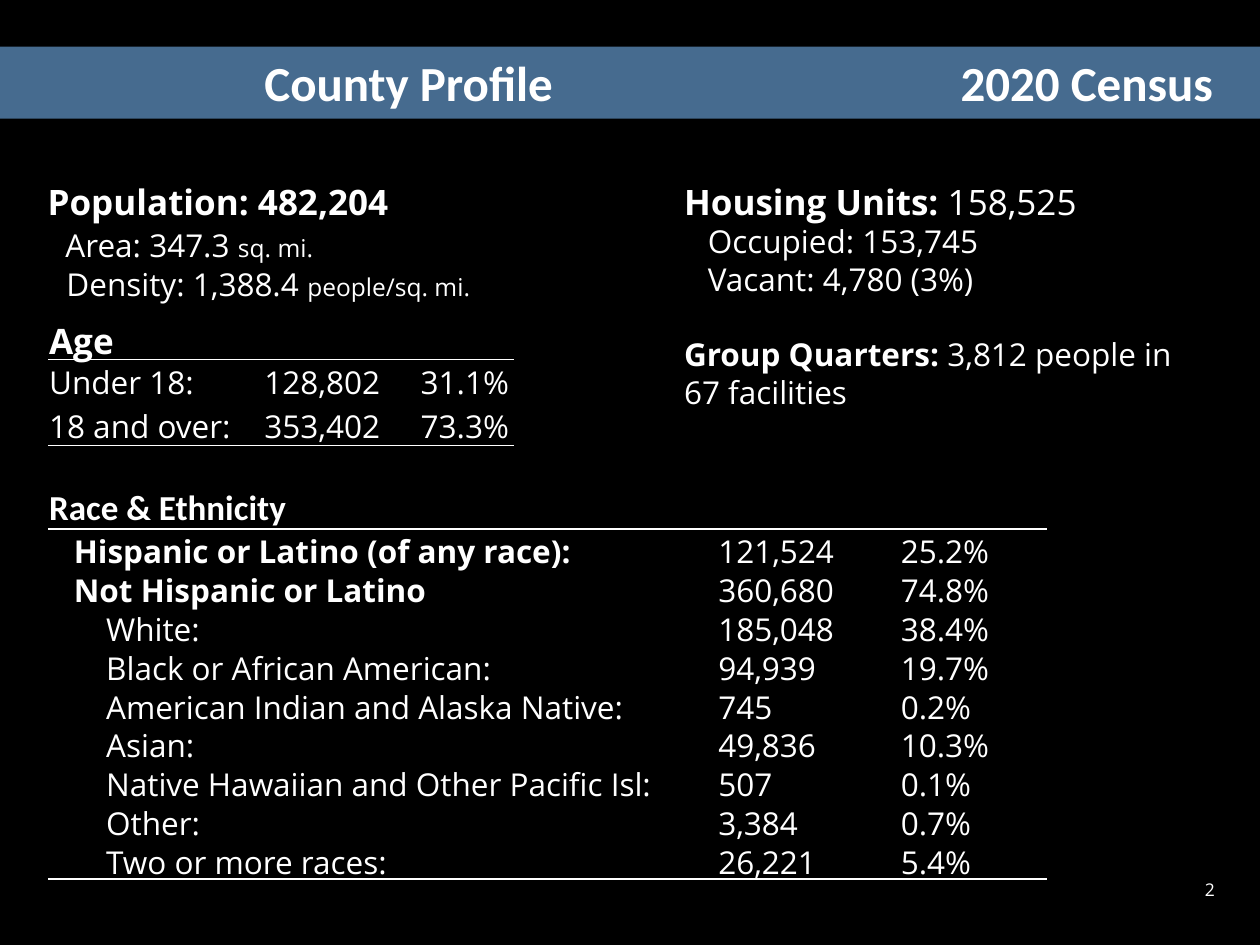
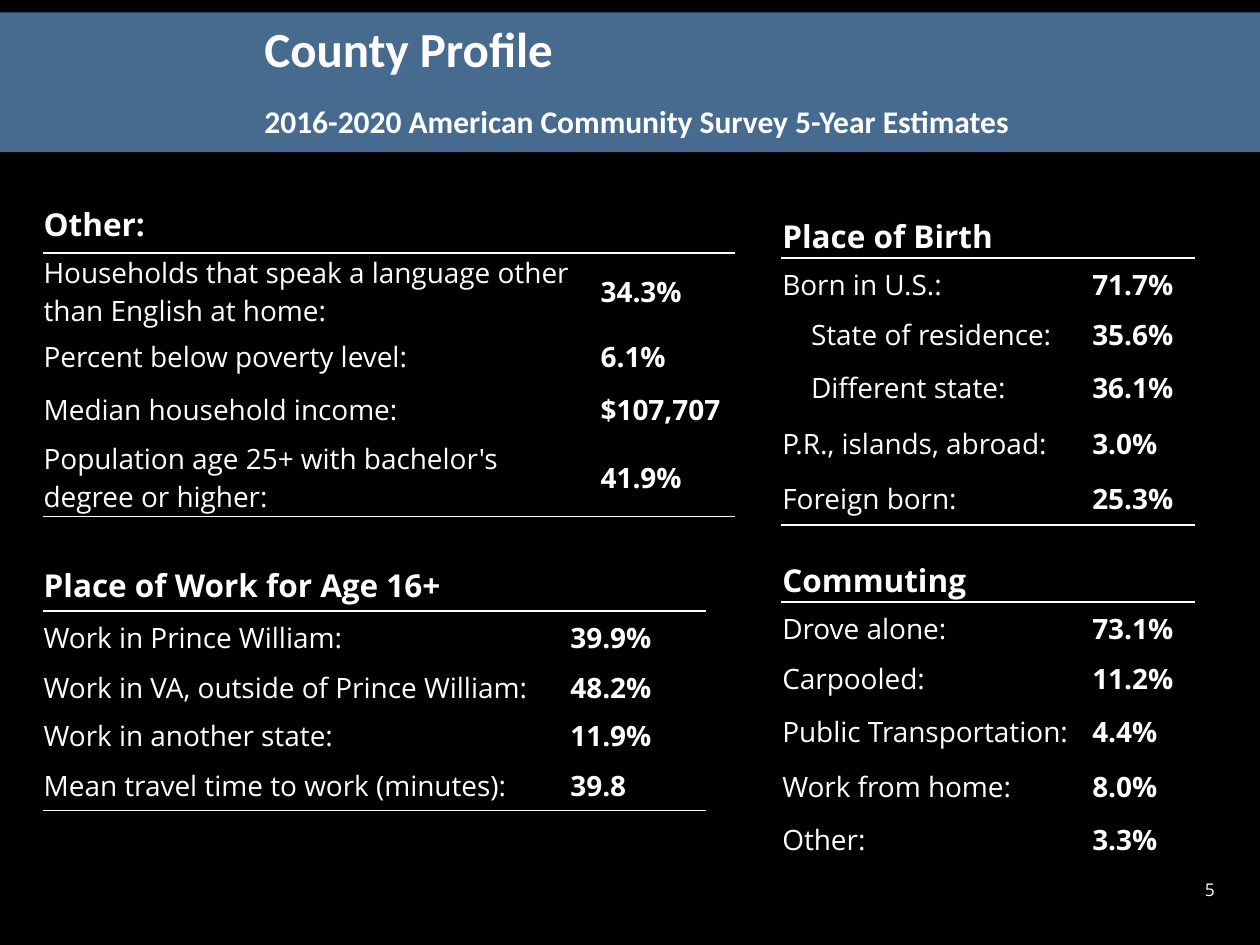
from lxml.etree import SubElement
from pptx import Presentation
from pptx.dml.color import RGBColor
from pptx.enum.text import MSO_ANCHOR, MSO_AUTO_SIZE, PP_ALIGN
from pptx.oxml.ns import qn
from pptx.util import Cm, Pt

BLACK = RGBColor(0x00, 0x00, 0x00)
WHITE = RGBColor(0xFF, 0xFF, 0xFF)
BAND_BLUE = RGBColor(0x7D, 0xBF, 0xFF)
BAND_OPACITY = 56000
BODY_FONT = "Open Sans"
TITLE_FONT = "Calibri"
CELL_INSET = 0.02
TITLE_TAB = (19.12, "r")
SHARE_TAB = (3.15, "l")


def add_run(paragraph, text, size, bold=False, name=BODY_FONT, tab=None):
    if tab and "\t" in text:
        position, alignment = tab
        tabs = SubElement(paragraph._p.get_or_add_pPr(), qn("a:tabLst"))
        SubElement(tabs, qn("a:tab"), pos=str(Cm(position)), algn=alignment)
    run = paragraph.add_run()
    run.text = text
    for attribute, value in {"name": name, "size": Pt(size), "bold": bold}.items():
        setattr(run.font, attribute, value)
    run.font.color.rgb = WHITE


def add_ruled_table(slide, spec):
    """Draw a table with a rule below its heading and, if closed, below its last row."""
    heights, rows = spec["heights"], [(0, True, spec["heading"])] + spec["rows"]
    table = slide.shapes.add_table(
        len(rows), len(spec["widths"]), Cm(spec["left"]), Cm(spec["top"]),
        Cm(sum(spec["widths"])), Cm(sum(heights))).table
    table.first_row = table.horz_banding = False
    for column, width in zip(table.columns, spec["widths"]):
        column.width = Cm(width)
    last = len(rows) - 1
    for row_index, (indent, bold_label, *texts) in enumerate(rows):
        table.rows[row_index].height = Cm(heights[row_index])
        heading = row_index == 0
        ruled = {"a:lnT": row_index == 1,
                 "a:lnB": heading or (row_index == last and spec.get("closed", True))}
        for column_index, cell in enumerate(table.rows[row_index].cells):
            value_column = column_index > 0
            extra = spec.get("value_indent", 0) if value_column else indent
            margins = {"margin_left": CELL_INSET + extra, "margin_right": CELL_INSET,
                       "margin_top": CELL_INSET, "margin_bottom": 0}
            for attribute, value in margins.items():
                setattr(cell, attribute, Cm(value))
            cell.vertical_anchor = MSO_ANCHOR.MIDDLE
            properties = cell._tc.get_or_add_tcPr()
            for edge in ("a:lnL", "a:lnR", "a:lnT", "a:lnB"):
                line = SubElement(properties, qn(edge), w=str(Pt(1)))
                if ruled.get(edge):
                    SubElement(SubElement(line, qn("a:solidFill")), qn("a:srgbClr"), val=str(WHITE))
                else:
                    SubElement(line, qn("a:noFill"))
            cell.fill.background()
            paragraph = cell.text_frame.paragraphs[0]
            if column_index >= len(texts):
                paragraph.font.size = Pt(10)
                continue
            size = spec["heading_size"] if heading else spec["size"]
            name = spec.get("heading_font", BODY_FONT) if heading else BODY_FONT
            bold = spec.get("bold_values", False) if value_column else bold_label
            add_run(paragraph, texts[column_index], size, bold, name, SHARE_TAB)


def plain_rows(*rows):
    return [(0, False, *row) for row in rows]


GROUP_INDENT, RACE_INDENT, BIRTH_INDENT = 0.5, 1.15, 0.58
CENSUS_STYLE = {"left": 0.97, "heading_size": 20, "size": 18}
SURVEY_STYLE = {"heading_size": 18, "size": 16, "bold_values": True}
SURVEY_LEFT = {**SURVEY_STYLE, "left": 0.86}
SURVEY_RIGHT = {**SURVEY_STYLE, "left": 15.75, "widths": [6.25, 2.08]}

age = {
    **CENSUS_STYLE, "top": 6.38, "widths": [4.34, 5.06],
    "heights": [0.86, 0.89, 0.84], "heading": "Age",
    "rows": plain_rows(("Under 18:", "128,802\t31.1%"),
                       ("18 and over:", "353,402\t73.3%")),
}
race = {
    **CENSUS_STYLE, "top": 9.8, "widths": [13.49, 3.68, 2.97],
    "heights": [0.86] + [0.78] * 9, "heading": "Race & Ethnicity",
    "heading_font": TITLE_FONT,
    "rows": [
        (GROUP_INDENT, True, "Hispanic or Latino (of any race):", "121,524", "25.2%"),
        (GROUP_INDENT, True, "Not Hispanic or Latino", "360,680", "74.8%"),
        (RACE_INDENT, False, "White:", "185,048", "38.4%"),
        (RACE_INDENT, False, "Black or African American:", "94,939", "19.7%"),
        (RACE_INDENT, False, "American Indian and Alaska Native:", "745", "0.2%"),
        (RACE_INDENT, False, "Asian:", "49,836", "10.3%"),
        (RACE_INDENT, False, "Native Hawaiian and Other Pacific Isl:", "507", "0.1%"),
        (RACE_INDENT, False, "Other:", "3,384", "0.7%"),
        (RACE_INDENT, False, "Two or more races:", "26,221", "5.4%"),
    ],
}
work = {
    **SURVEY_LEFT, "top": 11.25, "widths": [10.62, 2.76],
    "heights": [1.07, 1.07, 0.94, 0.99, 1.02], "heading": "Place of Work for Age 16+",
    "rows": plain_rows(("Work in Prince William:", "39.9%"),
                       ("Work in VA, outside of Prince William:", "48.2%"),
                       ("Work in another state:", "11.9%"),
                       ("Mean travel time to work (minutes):", "39.8")),
}
birth = {
    **SURVEY_RIGHT, "top": 4.32, "heights": [0.78, 1.04, 0.99, 1.14, 1.14, 1.07],
    "heading": "Place of Birth",
    "rows": [
        (0, False, "Born in U.S.:", "71.7%"),
        (BIRTH_INDENT, False, "State of residence:", "35.6%"),
        (BIRTH_INDENT, False, "Different state:", "36.1%"),
        (0, False, "P.R., islands, abroad:", "3.0%"),
        (0, False, "Foreign born:", "25.3%"),
    ],
}
other = {
    **SURVEY_LEFT, "top": 3.91, "widths": [10.95, 3.0], "value_indent": 0.28,
    "heights": [1.19, 1.55, 1.04, 1.12, 1.6], "heading": "Other:",
    "rows": plain_rows(
        ("Households that speak a language other than English at home:", "34.3%"),
        ("Percent below poverty level:", "6.1%"),
        ("Median household income:", "$107,707"),
        ("Population age 25+ with bachelor's degree or higher:", "41.9%")),
}
commuting = {
    **SURVEY_RIGHT, "top": 11.25, "heights": [0.78, 1.04, 0.99, 1.14, 1.07, 1.07],
    "heading": "Commuting", "closed": False,
    "rows": plain_rows(("Drove alone:", "73.1%"), ("Carpooled:", "11.2%"),
                       ("Public Transportation:", "4.4%"), ("Work from home:", "8.0%"),
                       ("Other:", "3.3%")),
}

# Each paragraph: indent in cm, space before in points, runs of (text, size, bold)
population = {
    "box": (0.71, 3.51, 10.31, 3.43),
    "paragraphs": [
        (0, 0, [("Population: 482,204", 20, True)]),
        (0.36, 2, [("Area: 347.3 ", 18, False), ("sq. mi.", 14, False)]),
        (0.38, 0.5, [("Density: 1,388.4 ", 18, False), ("people/sq. mi.", 14, False)]),
    ],
}
housing = {
    "box": (13.54, 3.51, 10.62, 4.95),
    "paragraphs": [
        (0, 0, [("Housing Units: ", 20, True), ("158,525", 20, False)]),
        (0.48, 0, [("Occupied: 153,745", 18, False)]),
        (0.48, 0, [("Vacant: 4,780 (3%)", 18, False)]),
        (0, 21.5, [("Group Quarters: ", 18, True), ("3,812 people in 67 facilities", 18, False)]),
    ],
}

slides = [
    {"band": (0.94, 1.45), "number": "2", "texts": [population, housing], "tables": [race, age],
     "title": [("County Profile\t2020 Census", 28, 0)]},
    {"band": (0.25, 2.82), "number": "5", "texts": [], "tables": [work, birth, other, commuting],
     "title": [("County Profile", 28, 0),
               ("2016-2020 American Community Survey 5-Year Estimates", 18, 14)]},
]

presentation = Presentation()
presentation.slide_width, presentation.slide_height = Cm(25.4), Cm(19.05)
background = presentation.slide_master.background.fill
background.solid()
background.fore_color.rgb = BLACK

for content in slides:
    slide = presentation.slides.add_slide(presentation.slide_layouts[5])

    # Title band
    title = slide.shapes.title
    band_top, band_height = content["band"]
    title.left, title.top = Cm(0), Cm(band_top)
    title.width, title.height = presentation.slide_width, Cm(band_height)
    title.fill.solid()
    title.fill.fore_color.rgb = BAND_BLUE
    color = title.fill._xPr.find(qn("a:solidFill")).find(qn("a:srgbClr"))
    SubElement(color, qn("a:alpha"), val=str(BAND_OPACITY))
    frame = title.text_frame
    for attribute, value in {"auto_size": MSO_AUTO_SIZE.NONE, "word_wrap": True,
                             "vertical_anchor": MSO_ANCHOR.TOP,
                             "margin_left": Cm(5.33)}.items():
        setattr(frame, attribute, value)
    for index, (text, size, space_before) in enumerate(content["title"]):
        paragraph = frame.add_paragraph() if index else frame.paragraphs[0]
        paragraph.alignment = PP_ALIGN.LEFT
        paragraph.space_before = Pt(space_before)
        add_run(paragraph, text, size, True, TITLE_FONT, TITLE_TAB)

    # Text blocks
    for block in content["texts"]:
        frame = slide.shapes.add_textbox(*map(Cm, block["box"])).text_frame
        frame.word_wrap = True
        for index, (indent, space_before, runs) in enumerate(block["paragraphs"]):
            paragraph = frame.add_paragraph() if index else frame.paragraphs[0]
            paragraph._p.get_or_add_pPr().set("marL", str(Cm(indent)))
            paragraph.space_before = Pt(space_before)
            for run in runs:
                add_run(paragraph, *run)

    for table_spec in content["tables"]:
        add_ruled_table(slide, table_spec)

    # Slide number
    frame = slide.shapes.add_textbox(Cm(23.57), Cm(17.42), Cm(1.17), Cm(1.04)).text_frame
    frame.word_wrap = True
    frame.vertical_anchor = MSO_ANCHOR.MIDDLE
    frame.paragraphs[0].alignment = PP_ALIGN.RIGHT
    add_run(frame.paragraphs[0], content["number"], 10)

presentation.save("out.pptx")
